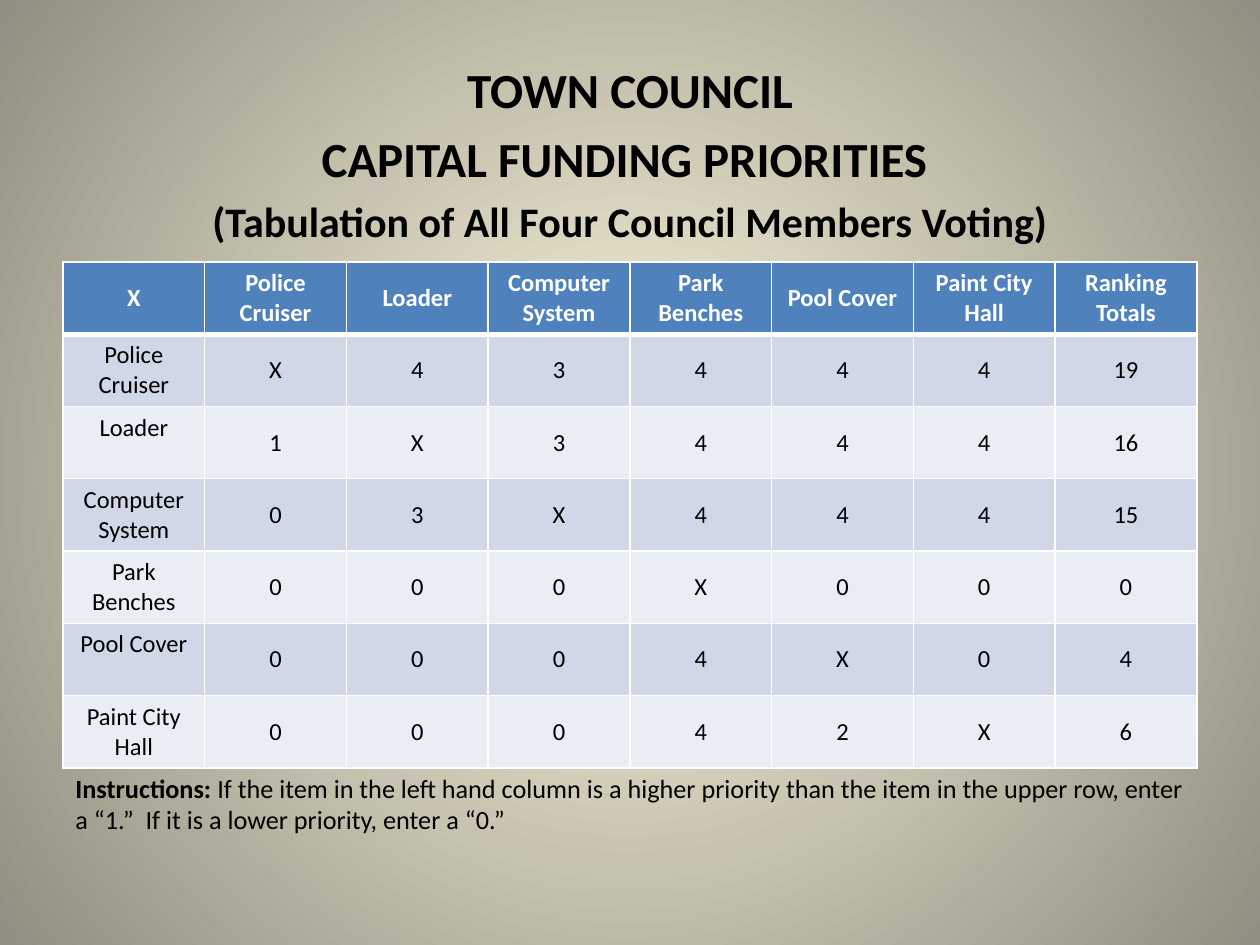
from dataclasses import dataclass

from lxml import etree
from pptx import Presentation
from pptx import util as u
from pptx.dml.color import RGBColor
from pptx.enum import text
from pptx.oxml import ns


@dataclass(frozen=True)
class Theme:
    """Colours, type sizes and line widths of the slide."""
    font: str = "Calibri"
    ink: str = "000000"
    white: str = "FFFFFF"
    glow: str = "FCF7DD"
    edge: str = "918E81"
    header: str = "4F81BD"
    bands: tuple = ("D0D8E8", "E9EDF4")
    heading: float = 28
    subheading: float = 24
    cell: float = 14
    note: float = 15
    rule: float = 1
    header_rule: float = 3
    space_ratio: float = 0.2


THEME = Theme()
PROJECTS = ["Police Cruiser", "Loader", "Computer System",
            "Park Benches", "Pool Cover", "Paint City Hall"]
VOTES = ["X43444", "1X3444", "03X444", "000X00", "0004X0", "00042X"]
TOTALS = [19, 16, 15, 0, 4, 6]
HEADING = [("TOWN COUNCIL", THEME.heading),
           ("CAPITAL FUNDING PRIORITIES ", THEME.heading),
           ("(Tabulation of All Four Council Members Voting)", THEME.subheading)]
INSTRUCTIONS = [("Instructions: ", True),
                ("If the item in the left hand column is a higher priority than "
                 "the item in the upper row, enter a “1.”  If it is a lower "
                 "priority, enter a “0.”", False)]


def apply(target, **values):
    """Set each named attribute on the target."""
    for name, value in values.items():
        setattr(target, name, value)


def add_words(paragraph, words, size, colour=THEME.ink, bold=False):
    """Append one formatted run to a paragraph."""
    run = paragraph.add_run()
    run.text = words
    apply(run.font, name=THEME.font, size=u.Pt(size), bold=bold)
    run.font.color.rgb = RGBColor.from_string(colour)


def paint_background(slide):
    """Fill the background with a glow that darkens outwards."""
    fill = slide.background.fill
    fill.gradient()
    for stop, colour, position in zip(fill.gradient_stops, (THEME.glow, THEME.edge), (0, 1)):
        stop.color.rgb = RGBColor.from_string(colour)
        stop.position = position
    gradient = slide.element.find(".//" + ns.qn("a:gradFill"))
    gradient.remove(gradient.find(ns.qn("a:lin")))
    circle = etree.SubElement(gradient, ns.qn("a:path"), {"path": "circle"})
    etree.SubElement(circle, ns.qn("a:fillToRect"), dict.fromkeys("ltrb", "50000"))


def place_heading(slide, left, top, width, height):
    """Set the three heading lines in the title placeholder."""
    heading = slide.shapes.title
    apply(heading, left=left, top=top, width=width, height=height)
    frame = heading.text_frame
    apply(frame, word_wrap=True, auto_size=text.MSO_AUTO_SIZE.NONE,
          vertical_anchor=text.MSO_ANCHOR.TOP)
    for index, (line, size) in enumerate(HEADING):
        paragraph = frame.add_paragraph() if index else frame.paragraphs[0]
        apply(paragraph, alignment=text.PP_ALIGN.CENTER,
              space_before=u.Pt(size * THEME.space_ratio))
        add_words(paragraph, line, size, bold=True)


def rule_cell(cell, top, bottom):
    """Draw white rules of the given weights around a cell."""
    weights = {"a:lnL": THEME.rule, "a:lnR": THEME.rule, "a:lnT": top, "a:lnB": bottom}
    properties = cell._tc.get_or_add_tcPr()
    for index, (side, weight) in enumerate(weights.items()):
        line = etree.Element(ns.qn(side), {"w": str(u.Pt(weight))})
        solid = etree.SubElement(line, ns.qn("a:solidFill"))
        etree.SubElement(solid, ns.qn("a:srgbClr"), {"val": THEME.white})
        properties.insert(index, line)


def place_ballot(slide, left, top, width, height):
    """Tabulate the votes of every project against every other."""
    rows = [["X", *PROJECTS, "Ranking Totals"]]
    rows += [[project, *votes, str(total)]
             for project, votes, total in zip(PROJECTS, VOTES, TOTALS)]
    ballot = slide.shapes.add_table(len(rows), len(rows[0]), left, top, width, height).table
    for r, row in enumerate(rows):
        is_header = r == 0
        fill = THEME.header if is_header else THEME.bands[(r - 1) % 2]
        for c, words in enumerate(row):
            cell = ballot.cell(r, c)
            is_project = c == 0 and not is_header
            cell.vertical_anchor = text.MSO_ANCHOR.TOP if is_project else text.MSO_ANCHOR.MIDDLE
            cell.fill.solid()
            cell.fill.fore_color.rgb = RGBColor.from_string(fill)
            paragraph = cell.text_frame.paragraphs[0]
            paragraph.alignment = text.PP_ALIGN.CENTER
            add_words(paragraph, words, THEME.cell,
                      THEME.white if is_header else THEME.ink, is_header)
            rule_cell(cell, THEME.header_rule if r == 1 else THEME.rule,
                      THEME.header_rule if is_header else THEME.rule)


def place_instructions(slide, left, top, width, height):
    """Explain below the table how to vote."""
    frame = slide.shapes.add_textbox(left, top, width, height).text_frame
    frame.word_wrap = True
    paragraph = frame.paragraphs[0]
    paragraph.space_before = u.Pt(THEME.note * THEME.space_ratio)
    for words, bold in INSTRUCTIONS:
        add_words(paragraph, words, THEME.note, bold=bold)


def main():
    """Build the slide and save it."""
    deck = Presentation()
    apply(deck, slide_width=u.Cm(25.4), slide_height=u.Cm(19.05))
    slide = deck.slides.add_slide(deck.slide_layouts.get_by_name("Title Only"))
    left, width = u.Cm(1.27), u.Cm(22.86)
    paint_background(slide)
    place_heading(slide, left, u.Cm(1.07), width, u.Cm(4))
    place_ballot(slide, left, u.Cm(5.28), width, u.Cm(10.2))
    place_instructions(slide, left, u.Cm(15.44), u.Cm(23.06), u.Cm(1.27))
    deck.save("out.pptx")


if __name__ == "__main__":
    main()
